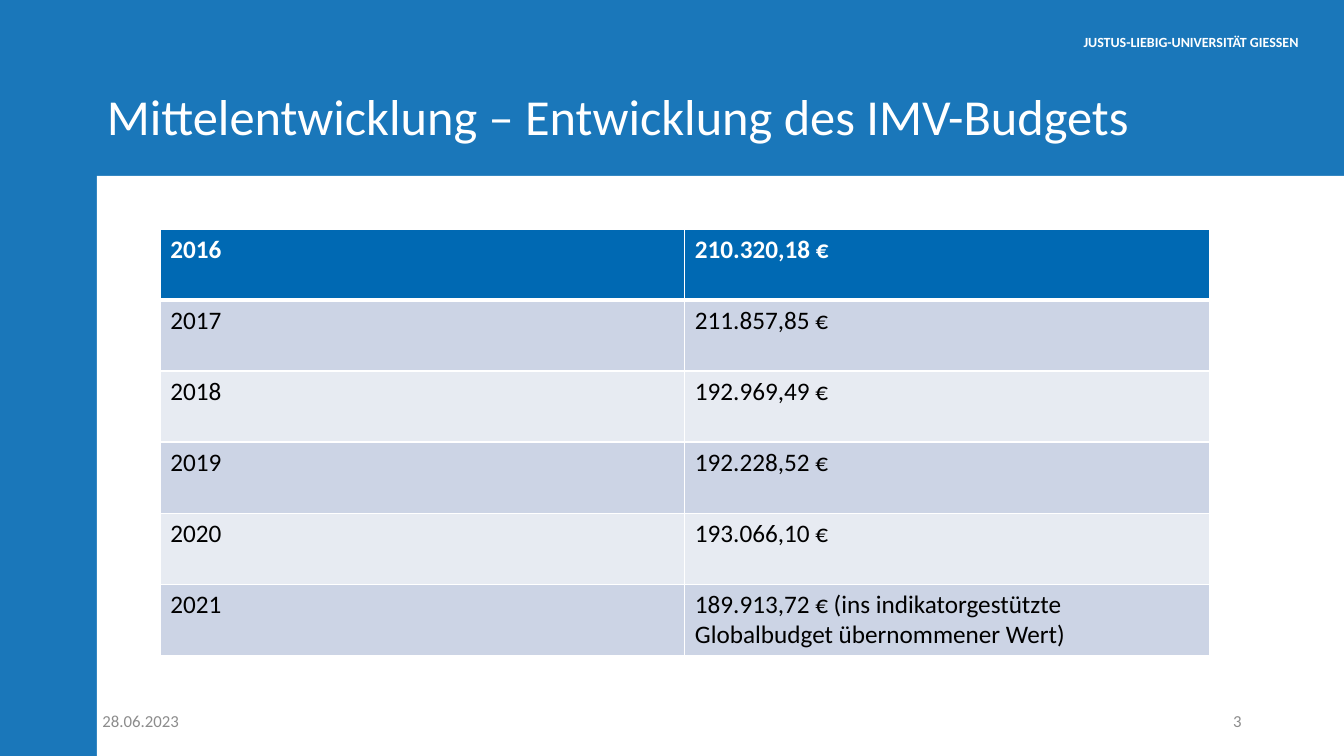
from lxml import etree
from pptx import Presentation
from pptx.dml.color import RGBColor
from pptx.enum.shapes import MSO_SHAPE
from pptx.enum.text import MSO_ANCHOR, MSO_AUTO_SIZE, PP_ALIGN
from pptx.oxml.ns import qn
from pptx.util import Cm, Pt

RECTANGLE = MSO_SHAPE.RECTANGLE
TOP, MIDDLE = MSO_ANCHOR.TOP, MSO_ANCHOR.MIDDLE
LEFT, RIGHT = PP_ALIGN.LEFT, PP_ALIGN.RIGHT
NO_AUTOFIT = MSO_AUTO_SIZE.NONE

FONT = "Calibri"
WHITE, BLACK, GREY = "FFFFFF", "000000", "8C8C8C"
BACKGROUND, HEADER_BLUE = "1A77BA", "0069B3"
BANDS = ("E7EBF2", "CCD4E5")
BUDGETS = [
    ("2016", "210.320,18 €"),
    ("2017", "211.857,85 €"),
    ("2018", "192.969,49 €"),
    ("2019", "192.228,52 €"),
    ("2020", "193.066,10 €"),
    ("2021", "189.913,72 € (ins indikatorgestützte Globalbudget übernommener Wert)"),
]


def paint(fill, color):
    """Give a fill one solid colour."""
    fill.solid()
    fill.fore_color.rgb = RGBColor.from_string(color)


def write(frame, text, size, color, bold=False, align=LEFT, spacing=1.0):
    """Put one formatted run into a text frame."""
    paragraph = frame.paragraphs[0]
    paragraph.alignment = align
    paragraph.line_spacing = spacing
    run = paragraph.add_run()
    run.text = text
    run.font.name = FONT
    run.font.size = Pt(size)
    run.font.bold = bold
    run.font.color.rgb = RGBColor.from_string(color)


def add_panel(slide, left, top, width, height):
    """Add the white content area."""
    panel = slide.shapes.add_shape(RECTANGLE, Cm(left), Cm(top), Cm(width), Cm(height))
    panel.shadow.inherit = False
    paint(panel.fill, WHITE)
    panel.line.fill.background()


def add_label(slide, box, text, size, color, anchor=MIDDLE, **style):
    """Add a small text line in a box of left, top, width and height."""
    frame = slide.shapes.add_textbox(*map(Cm, box)).text_frame
    frame.word_wrap = True
    frame.vertical_anchor = anchor
    write(frame, text, size, color, **style)


def set_title(slide, text):
    """Place and fill the title placeholder."""
    title = slide.shapes.title
    title.left, title.top, title.width, title.height = map(Cm, (2.44, 2.18, 31.43, 2.69))
    title.text_frame.auto_size = NO_AUTOFIT
    title.text_frame.vertical_anchor = TOP
    write(title.text_frame, text, 36, WHITE, spacing=0.9)


def set_border(cell, side, points):
    """Draw one white border of a table cell."""
    line = etree.SubElement(cell._tc.get_or_add_tcPr(), qn(f"a:ln{side}"), w=str(Pt(points)))
    solid = etree.SubElement(line, qn("a:solidFill"))
    etree.SubElement(solid, qn("a:srgbClr"), val=WHITE)


def add_budget_table(slide):
    """Add the budget per year with a header row and banded rows."""
    table = slide.shapes.add_table(
        len(BUDGETS), 2, Cm(4.04), Cm(5.77), Cm(26.44), Cm(10.74)
    ).table
    for row, budget in enumerate(BUDGETS):
        header = row == 0
        for column, text in enumerate(budget):
            cell = table.cell(row, column)
            widths = {"L": 1, "R": 1, "T": 3 if row == 1 else 1, "B": 3 if header else 1}
            for side, points in widths.items():
                set_border(cell, side, points)
            paint(cell.fill, HEADER_BLUE if header else BANDS[row % 2])
            write(cell.text_frame, text, 18, WHITE if header else BLACK, bold=header)


def main():
    """Build the slide and save it."""
    deck = Presentation()
    deck.slide_width, deck.slide_height = Cm(33.87), Cm(19.05)
    slide = deck.slides.add_slide(deck.slide_layouts[5])
    paint(slide.background.fill, BACKGROUND)
    add_panel(slide, 2.44, 4.43, 31.43, 14.62)
    add_label(slide, (19.05, 0.76, 13.92, 0.5), "JUSTUS-LIEBIG-UNIVERSITÄT GIESSEN",
              10, WHITE, anchor=TOP, bold=True, align=RIGHT, spacing=0.9)
    add_label(slide, (2.33, 17.66, 7.62, 1.01), "28.06.2023", 12, GREY)
    add_label(slide, (23.92, 17.66, 7.62, 1.01), "3", 12, GREY, align=RIGHT)
    set_title(slide, "Mittelentwicklung – Entwicklung des IMV-Budgets")
    add_budget_table(slide)
    deck.save("out.pptx")


if __name__ == "__main__":
    main()
